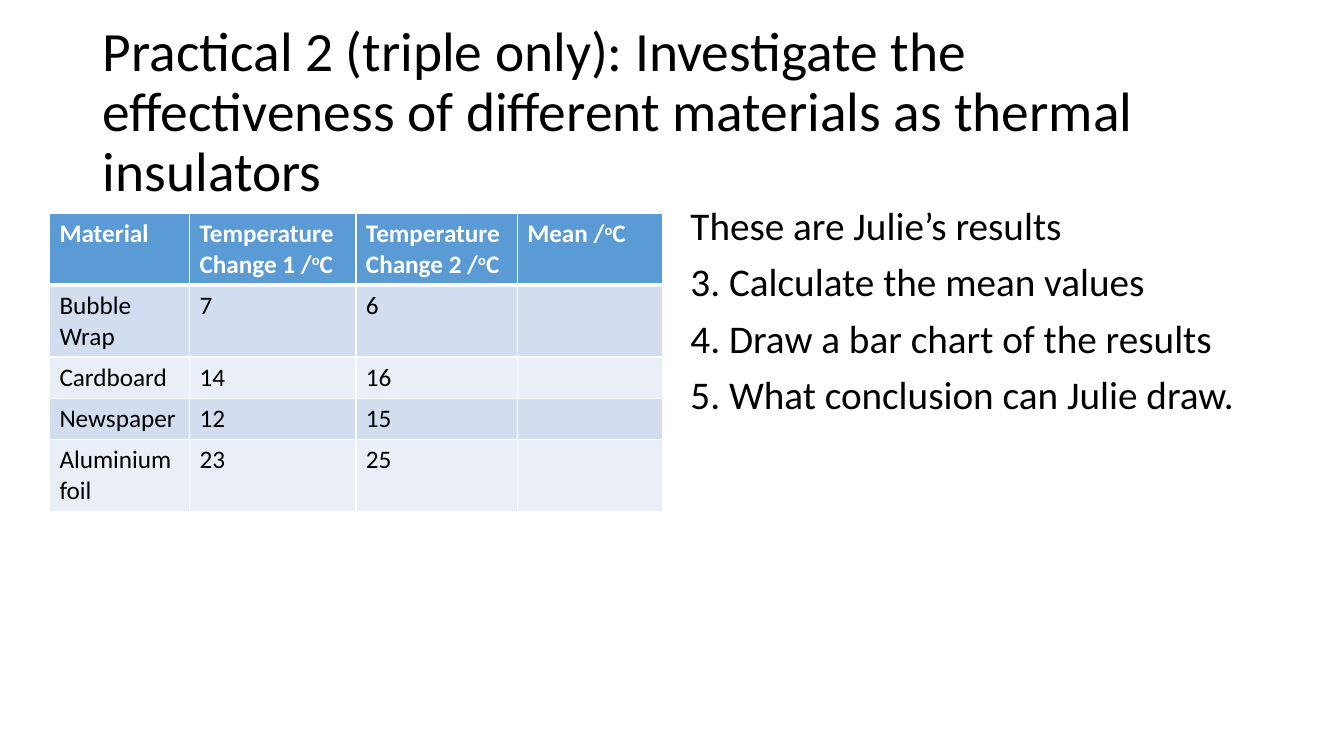
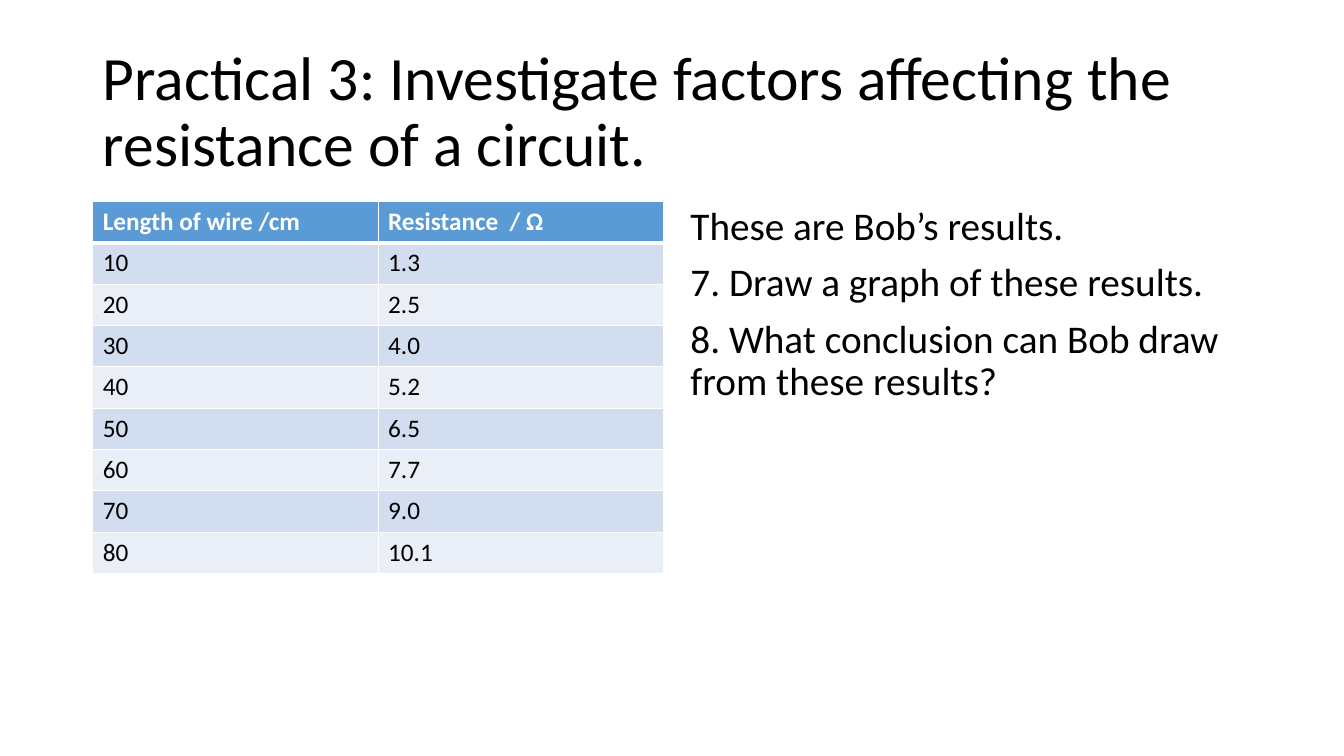
from lxml.etree import SubElement as Sub
from pptx import Presentation
from pptx.dml.color import RGBColor as RGB
from pptx.enum.text import MSO_ANCHOR as Anchor, MSO_AUTO_SIZE as Fit, PP_ALIGN as Align
from pptx.oxml.ns import qn
from pptx.util import Inches, Pt

FONT = "Calibri"
COLORS = {"ink": "000000", "white": "FFFFFF", "head": "5B9BD5",
          "odd": "D2DEEF", "even": "EAEFF7"}
ROW = 0.41

# Text between two ^ marks is raised.
SLIDES = [
    {"title": "Practical 2 (triple only): Investigate the effectiveness of "
              "different materials as thermal insulators",
     "size": 39.6,
     "at": (0.49, 2.12),
     "cols": [1.39, 1.65, 1.6, 1.44],
     "rows": [
         ("Material", "Temperature Change 1 /^o^C",
          "Temperature Change 2 /^o^C", "Mean /^o^C"),
         ("Bubble Wrap", "7", "6", ""),
         ("Cardboard", "14", "16", ""),
         ("Newspaper", "12", "15", ""),
         ("Aluminium foil", "23", "25", "")],
     "tasks": ["These are Julie’s results",
               "3. Calculate the mean values",
               "4. Draw a bar chart of the results",
               "5. What conclusion can Julie draw."]},
    {"title": "Practical 3: Investigate factors affecting the resistance "
              "of a circuit.",
     "size": 44,
     "at": (0.92, 2),
     "cols": [2.83, 2.83],
     "rows": [
         ("Length of wire /cm", "Resistance  / Ω"),
         ("10", "1.3"), ("20", "2.5"), ("30", "4.0"), ("40", "5.2"),
         ("50", "6.5"), ("60", "7.7"), ("70", "9.0"), ("80", "10.1")],
     "tasks": ["These are Bob’s results.",
               "7. Draw a graph of these results.",
               "8. What conclusion can Bob draw from these results?"]},
]


def style(font, size, color="ink", bold=False):
    font.name, font.size, font.bold = FONT, Pt(size), bold
    font.color.rgb = RGB.from_string(COLORS[color])


def add_title(slide, text, size):
    title = slide.shapes.title
    title.left, title.top = Inches(0.92), Inches(0.4)
    title.width, title.height = Inches(11.5), Inches(1.45)
    frame = title.text_frame
    frame.text = text
    frame.word_wrap, frame.auto_size = True, Fit.NONE
    frame.vertical_anchor = Anchor.MIDDLE
    para = frame.paragraphs[0]
    para.alignment, para.line_spacing = Align.LEFT, 0.9
    style(para.runs[0].font, size)


def set_lines(cell, base):
    """Draw white cell borders, with the given width in points at the base."""
    props = cell._tc.get_or_add_tcPr()
    for side, width in (("L", 1), ("R", 1), ("T", 1), ("B", base)):
        line = Sub(props, qn(f"a:ln{side}"), w=str(Pt(width)))
        fill = Sub(line, qn("a:solidFill"))
        Sub(fill, qn("a:srgbClr"), val=COLORS["white"])


def fill_cell(cell, text, row):
    head = row == 0
    set_lines(cell, 3 if head else 1)
    shade = "head" if head else "odd" if row % 2 else "even"
    cell.fill.solid()
    cell.fill.fore_color.rgb = RGB.from_string(COLORS[shade])
    para = cell.text_frame.paragraphs[0]
    color = "white" if head else "ink"
    style(para.font, 18, color, head)
    for i, part in enumerate(text.split("^") if text else []):
        run = para.add_run()
        run.text = part
        style(run.font, 18, color, head)
        if i % 2:
            run._r.get_or_add_rPr().set("baseline", "30000")


def add_grid(slide, at, cols, rows):
    left, top = at
    table = slide.shapes.add_table(
        len(rows), len(cols), Inches(left), Inches(top),
        Inches(sum(cols)), Inches(ROW * len(rows))).table
    for col, width in zip(table.columns, cols):
        col.width = Inches(width)
    for r, row in enumerate(rows):
        for c, text in enumerate(row):
            fill_cell(table.cell(r, c), text, r)
    # Borders must come before the fill in the cell properties.
    for cell in table.iter_cells():
        props = cell._tc.tcPr
        props.append(props.find(qn("a:solidFill")))


def add_tasks(slide, tasks):
    box = slide.shapes.add_textbox(
        Inches(6.75), Inches(2), Inches(5.67), Inches(4.76))
    frame = box.text_frame
    frame.word_wrap = True
    frame.text = "\n".join(tasks)
    for para in frame.paragraphs:
        para.line_spacing, para.space_before = 0.9, Pt(10)
        style(para.runs[0].font, 28)


def main():
    deck = Presentation()
    deck.slide_width, deck.slide_height = Inches(13.33), Inches(7.5)
    for data in SLIDES:
        slide = deck.slides.add_slide(deck.slide_layouts[5])
        add_title(slide, data["title"], data["size"])
        add_grid(slide, data["at"], data["cols"], data["rows"])
        add_tasks(slide, data["tasks"])
    deck.save("out.pptx")


if __name__ == "__main__":
    main()
